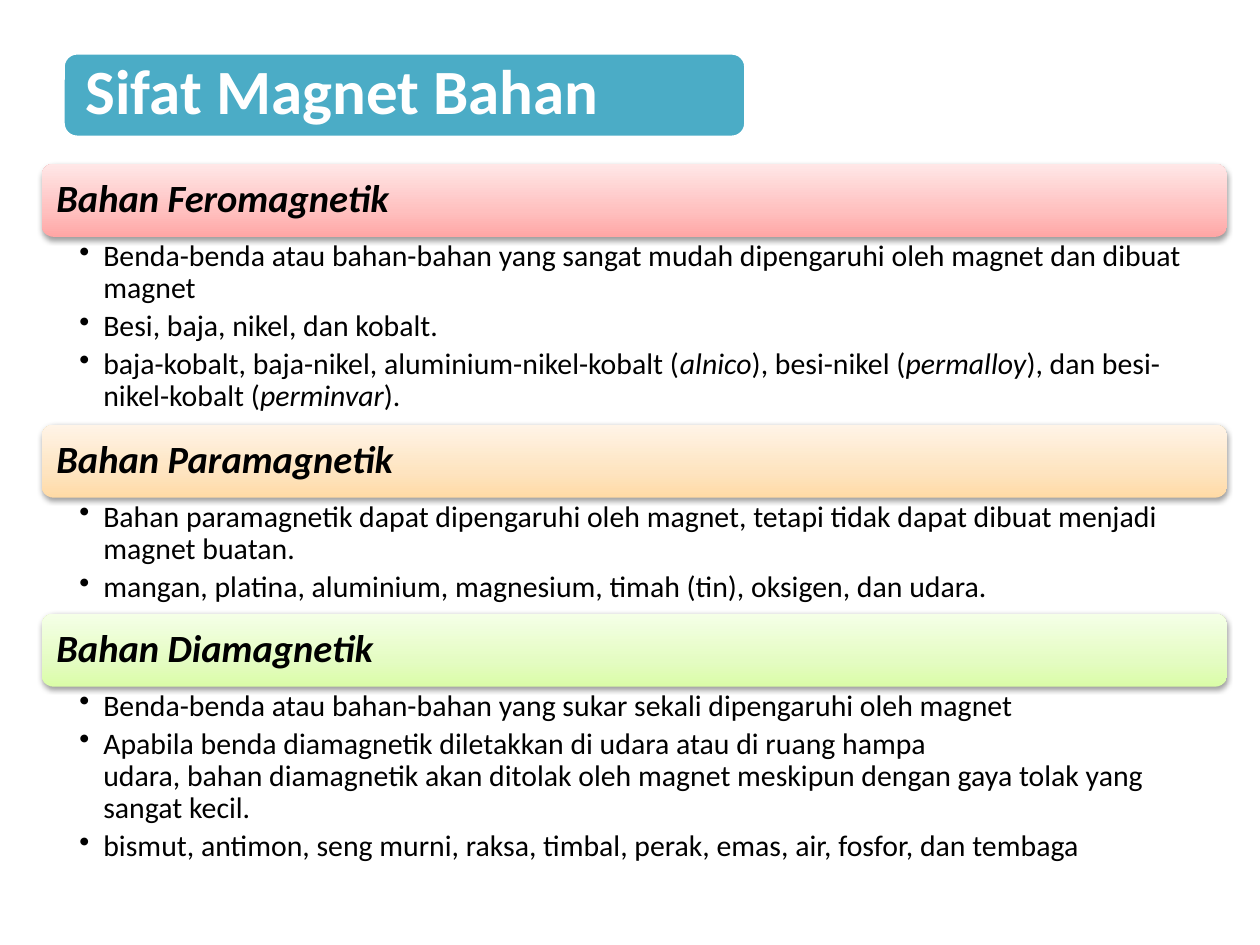
from dataclasses import dataclass

from pptx import Presentation
from pptx.dml.color import RGBColor as RGB
from pptx.enum.shapes import MSO_SHAPE as Preset
from pptx.enum.text import MSO_ANCHOR as Anchor, MSO_AUTO_SIZE as AutoSize, PP_ALIGN as Align
from pptx.oxml import parse_xml
from pptx.oxml.ns import nsdecls, qn
from pptx.util import Inches, Pt


@dataclass(frozen=True)
class Theme:
    font: str = "Calibri"
    title_size: float = 36
    heading_size: float = 22
    body_size: float = 17
    bullet_gap: float = 3.4
    ink: str = "000000"
    paper: str = "FFFFFF"
    accent: str = "4BACC6"


THEME = Theme()
LEFT, WIDTH = 0.33, 9.41
SECTIONS_TOP, HEADING_HEIGHT = 1.3, 0.58
BULLET_INDENT = 0.19

# Heading, gradient from bottom to top, height of the bullets, bullets.
# A bullet is a list of pieces that alternate between upright and italic.
SECTIONS = [
    ("Bahan Feromagnetik", ("FFA6A5", "FFC0BF", "FFE7E7"), 1.49, [
        ["Benda-benda atau bahan-bahan yang sangat mudah dipengaruhi oleh magnet dan dibuat\nmagnet"],
        ["Besi, baja, nikel, dan kobalt."],
        ["baja-kobalt, baja-nikel, aluminium-nikel-kobalt (", "alnico", "), besi-nikel (",
         "permalloy", "), dan besi-nikel-kobalt (", "perminvar", ")."],
    ]),
    ("Bahan Paramagnetik", ("FFDAA5", "FEE4C0", "FFF4E7"), 0.92, [
        ["Bahan paramagnetik dapat dipengaruhi oleh magnet, tetapi tidak dapat dibuat menjadi\nmagnet buatan."],
        ["mangan, platina, aluminium, magnesium, timah (tin), oksigen, dan udara."],
    ]),
    ("Bahan Diamagnetik", ("DAFDA7", "E4FCC2", "F5FFE7"), 1.49, [
        ["Benda-benda atau bahan-bahan yang sukar sekali dipengaruhi oleh magnet"],
        ["Apabila benda diamagnetik diletakkan di udara atau di ruang hampa\n"
         "udara, bahan diamagnetik akan ditolak oleh magnet meskipun dengan gaya tolak yang sangat kecil."],
        ["bismut, antimon, seng murni, raksa, timbal, perak, emas, air, fosfor, dan tembaga"],
    ]),
]


def apply(target, **values):
    for name, value in values.items():
        setattr(target, name, value)


def box(left, top, width, height):
    return [Inches(length) for length in (left, top, width, height)]


def set_frame(frame, anchor, left, top, right, bottom):
    apply(frame, word_wrap=True, auto_size=AutoSize.NONE, vertical_anchor=anchor,
          margin_left=Inches(left), margin_top=Inches(top),
          margin_right=Inches(right), margin_bottom=Inches(bottom))


def write(paragraph, text, size, color=THEME.ink, bold=False, italic=False):
    """Add text to a paragraph, with a line break at each newline."""
    apply(paragraph, alignment=Align.LEFT, line_spacing=0.9)
    for number, line in enumerate(text.split("\n")):
        if number:
            paragraph.add_line_break()
        run = paragraph.add_run()
        run.text = line
        apply(run.font, name=THEME.font, size=Pt(size), bold=bold, italic=italic)
        run.font.color.rgb = RGB.from_string(color)


def add_panel(slide, *place):
    panel = slide.shapes.add_shape(Preset.ROUNDED_RECTANGLE, *box(*place))
    panel.shadow.inherit = False
    return panel


def shade(panel, colors):
    """Give a panel a vertical gradient and a soft shadow below it."""
    panel.line.fill.background()
    stops = "".join(f'<a:gs pos="{share * 1000}"><a:srgbClr val="{color}"/></a:gs>'
                    for share, color in zip((0, 35, 100), colors))
    properties = panel.element.spPr
    properties.find(qn("a:ln")).addprevious(parse_xml(
        f'<a:gradFill {nsdecls("a")} rotWithShape="1"><a:gsLst>{stops}</a:gsLst>'
        '<a:lin ang="16200000" scaled="0"/></a:gradFill>'))
    properties.find(qn("a:effectLst")).append(parse_xml(
        f'<a:outerShdw {nsdecls("a")} blurRad="{Pt(3.1)}" dist="{Pt(1.6)}" dir="5400000" '
        'rotWithShape="0"><a:srgbClr val="000000"><a:alpha val="38000"/></a:srgbClr></a:outerShdw>'))


def add_title(slide, text):
    banner = add_panel(slide, 0.5, 0.42, 5.42, 0.67)
    banner.fill.solid()
    banner.fill.fore_color.rgb = RGB.from_string(THEME.accent)
    banner.line.color.rgb = RGB.from_string(THEME.paper)
    banner.line.width = Pt(2)

    title = slide.shapes.title
    banner.element.addnext(title.element)  # the title lies on its banner
    apply(title, **dict(zip(("left", "top", "width", "height"), box(0.53, 0.45, 5.35, 0.6))))
    set_frame(title.text_frame, Anchor.MIDDLE, 0.15, 0.15, 0.15, 0.15)
    write(title.text_frame.paragraphs[0], text, THEME.title_size, THEME.paper, bold=True)


def add_heading(slide, top, text, colors):
    heading = add_panel(slide, LEFT, top, WIDTH, HEADING_HEIGHT)
    shade(heading, colors)
    set_frame(heading.text_frame, Anchor.MIDDLE, 0.09, 0.09, 0.09, 0.09)
    write(heading.text_frame.paragraphs[0], text, THEME.heading_size, bold=True, italic=True)


def add_bullets(slide, top, height, bullets):
    frame = slide.shapes.add_textbox(*box(LEFT, top, WIDTH, height)).text_frame
    set_frame(frame, Anchor.TOP, 0.3, 0.03, 0.17, 0.03)
    for number, pieces in enumerate(bullets):
        paragraph = frame.add_paragraph() if number else frame.paragraphs[0]
        for position, piece in enumerate(pieces):
            write(paragraph, piece, THEME.body_size, italic=position % 2 == 1)
        apply(paragraph, level=1, space_after=Pt(THEME.bullet_gap))
        properties = paragraph._p.get_or_add_pPr()
        properties.set("marL", str(Inches(BULLET_INDENT)))
        properties.set("indent", str(-Inches(BULLET_INDENT)))
        properties.append(parse_xml(f'<a:buChar {nsdecls("a")} char="•"/>'))


def main():
    deck = Presentation()
    apply(deck, slide_width=Inches(10), slide_height=Inches(7.5))
    slide = deck.slides.add_slide(deck.slide_layouts[5])
    add_title(slide, "Sifat Magnet Bahan")
    top = SECTIONS_TOP
    for heading, colors, height, bullets in SECTIONS:
        add_heading(slide, top, heading, colors)
        add_bullets(slide, top + HEADING_HEIGHT, height, bullets)
        top += HEADING_HEIGHT + height
    deck.save("out.pptx")


if __name__ == "__main__":
    main()
